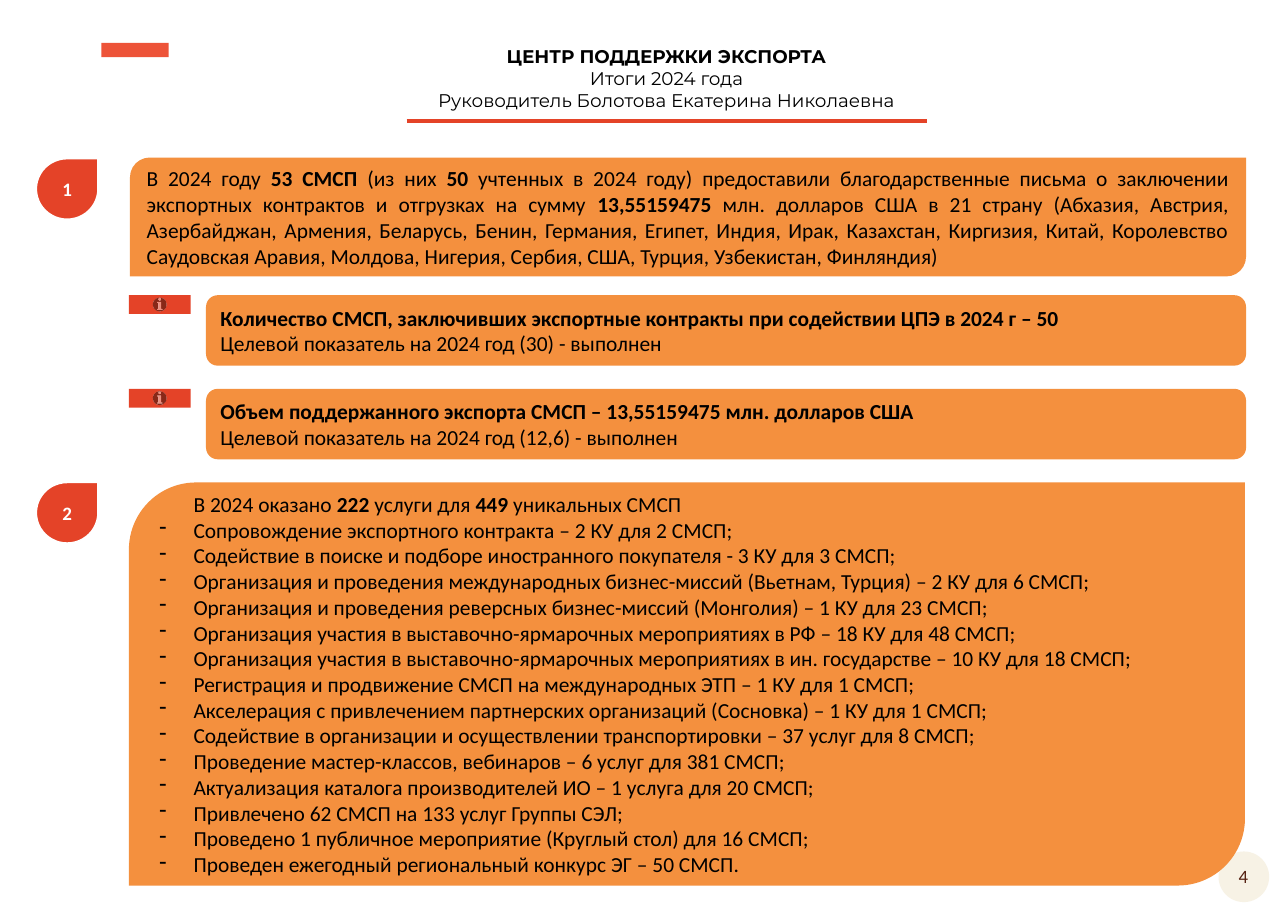
from lxml import etree
from pptx import Presentation
from pptx.dml.color import RGBColor
from pptx.enum.shapes import MSO_CONNECTOR, MSO_SHAPE
from pptx.enum.text import MSO_ANCHOR, MSO_AUTO_SIZE, PP_ALIGN
from pptx.oxml.ns import qn
from pptx.util import Inches, Pt

CENTER, JUSTIFY, LEFT = PP_ALIGN.CENTER, PP_ALIGN.JUSTIFY, PP_ALIGN.LEFT
MIDDLE = MSO_ANCHOR.MIDDLE
NO_AUTOFIT = MSO_AUTO_SIZE.NONE
STRAIGHT = MSO_CONNECTOR.STRAIGHT
OVAL, BAR = MSO_SHAPE.OVAL, MSO_SHAPE.RECTANGLE
DROP = MSO_SHAPE.TEAR
DIAGONAL = MSO_SHAPE.ROUND_2_DIAG_RECTANGLE
ROUNDED = MSO_SHAPE.ROUNDED_RECTANGLE
INFO = MSO_SHAPE.ACTION_BUTTON_INFORMATION

COLORS = {
    "orange": "F4903E",
    "red": "E44328",
    "coral": "ED5338",
    "cream": "F7F2E5",
    "brown": "562212",
    "black": "000000",
    "white": "FFFFFF",
}

TITLE = [
    "*ЦЕНТР ПОДДЕРЖКИ ЭКСПОРТА*",
    "Итоги 2024 года",
    "Руководитель Болотова Екатерина Николаевна",
]
CONTRACTS = (
    "В 2024 году *53 СМСП* (из них *50* учтенных в 2024 году) предоставили "
    "благодарственные письма о заключении экспортных контрактов и отгрузках "
    "на сумму *13,55159475* млн. долларов США в 21 страну (Абхазия, Австрия, "
    "Азербайджан, Армения, Беларусь, Бенин, Германия, Египет, Индия, Ирак, "
    "Казахстан, Киргизия, Китай, Королевство Саудовская Аравия, Молдова, "
    "Нигерия, Сербия, США, Турция, Узбекистан, Финляндия)"
)
INDICATORS = [
    (2.68, [
        "*Количество СМСП, заключивших экспортные контракты при содействии ЦПЭ в 2024 г – 50*",
        "Целевой показатель на 2024 год (30) - выполнен",
    ]),
    (3.53, [
        "*Объем поддержанного экспорта СМСП – 13,55159475 млн. долларов США*",
        "Целевой показатель на 2024 год (12,6) - выполнен",
    ]),
]
SERVICES_TOTAL = "В 2024 оказано *222* услуги для *449* уникальных СМСП"
SERVICES = [
    "Сопровождение экспортного контракта – 2 КУ для 2 СМСП;",
    "Содействие в поиске и подборе иностранного покупателя - 3 КУ для 3 СМСП;",
    "Организация и проведения международных бизнес-миссий (Вьетнам, Турция) – 2 КУ для 6 СМСП;",
    "Организация и проведения реверсных бизнес-миссий (Монголия) – 1 КУ для 23 СМСП;",
    "Организация участия в выставочно-ярмарочных мероприятиях в РФ – 18 КУ для 48 СМСП;",
    "Организация участия в выставочно-ярмарочных мероприятиях в ин. государстве – 10 КУ для 18 СМСП;",
    "Регистрация и продвижение СМСП на международных ЭТП – 1 КУ для 1 СМСП;",
    "Акселерация с привлечением партнерских организаций (Сосновка) – 1 КУ для 1 СМСП;",
    "Содействие в организации и осуществлении транспортировки – 37 услуг для 8 СМСП;",
    "Проведение мастер-классов, вебинаров – 6 услуг для 381 СМСП;",
    "Актуализация каталога производителей ИО – 1 услуга для 20 СМСП;",
    "Привлечено 62 СМСП на 133 услуг Группы СЭЛ;",
    "Проведено 1 публичное мероприятие (Круглый стол) для 16 СМСП;",
    "Проведен ежегодный региональный конкурс ЭГ – 50 СМСП.",
]


class SlideBuilder:
    def __init__(self, slide, font="Calibri", size=14):
        self.slide = slide
        self.font = font
        self.size = size

    def color(self, name):
        return RGBColor.from_string(COLORS[name])

    def set_text(self, frame, lines, align=LEFT, color="black", size=None, font=None):
        frame.word_wrap = True
        frame.auto_size = NO_AUTOFIT
        frame.vertical_anchor = MIDDLE
        for index, line in enumerate(lines):
            paragraph = frame.add_paragraph() if index else frame.paragraphs[0]
            paragraph.alignment = align
            paragraph.font.name = font or self.font
            paragraph.font.size = Pt(size or self.size)
            paragraph.font.color.rgb = self.color(color)
            pieces = line.split("*")
            emphasis = [number % 2 == 1 for number, piece in enumerate(pieces) if piece]
            if len(set(emphasis)) == 1:
                paragraph.font.bold = emphasis[0]
            for number, piece in enumerate(pieces):
                if piece:
                    run = paragraph.add_run()
                    run.text = piece
                    if len(set(emphasis)) > 1:
                        run.font.bold = number % 2 == 1

    def title(self, left, top, width, height, lines):
        heading = self.slide.shapes.title
        heading.left, heading.top = Inches(left), Inches(top)
        heading.width, heading.height = Inches(width), Inches(height)
        self.set_text(heading.text_frame, lines, CENTER, size=12, font="Montserrat")

    def shape(self, kind, left, top, width, height, fill, outline=None):
        shape = self.slide.shapes.add_shape(
            kind, Inches(left), Inches(top), Inches(width), Inches(height))
        shape.shadow.inherit = False
        shape.fill.solid()
        shape.fill.fore_color.rgb = self.color(fill)
        if outline:
            shape.line.color.rgb = self.color(outline)
            shape.line.width = Pt(1)
        else:
            shape.line.fill.background()
        return shape

    def panel(self, kind, left, top, width, height, lines, align=LEFT):
        panel = self.shape(kind, left, top, width, height, "orange")
        self.set_text(panel.text_frame, lines, align)
        return panel

    def marker(self, top, number):
        frame = self.shape(DROP, 0.33, top, 0.56, 0.55, "red", "white").text_frame
        frame.margin_left = frame.margin_right = 0
        frame.margin_top = frame.margin_bottom = 0
        self.set_text(frame, [f"*{number}*"], CENTER, "white", 12.4)

    def label(self, left, top, width, height, text, color, size):
        box = self.slide.shapes.add_textbox(
            Inches(left), Inches(top), Inches(width), Inches(height))
        self.set_text(box.text_frame, [text], CENTER, color, size)

    def dash_list(self, frame, indent):
        for index, paragraph in enumerate(frame.paragraphs):
            properties = paragraph._p.get_or_add_pPr()
            properties.set("marL", str(Inches(indent)))
            properties.set("indent", str(-Inches(indent) if index else 0))
            if index:
                bullet = etree.Element(qn("a:buChar"), char="-")
                properties.find(qn("a:defRPr")).addprevious(bullet)

    def rule(self, left, right, y):
        line = self.slide.shapes.add_connector(
            STRAIGHT, Inches(left), Inches(y), Inches(right), Inches(y))
        line.line.color.rgb = self.color("red")
        line.line.width = Pt(2.5)
        etree.SubElement(line._element.spPr, qn("a:effectLst"))


def main():
    presentation = Presentation()
    presentation.slide_width = Inches(11.69)
    presentation.slide_height = Inches(8.27)
    builder = SlideBuilder(presentation.slides.add_slide(presentation.slide_layouts[5]))

    builder.shape(OVAL, 11.06, 7.73, 0.46, 0.46, "cream")
    builder.label(11.03, 7.8, 0.51, 0.31, "4", "brown", 12.3)
    builder.shape(BAR, 0.92, 0.39, 0.61, 0.13, "coral")
    builder.title(3.44, 0.23, 5.22, 0.96, TITLE)
    builder.rule(3.69, 8.41, 1.1)

    builder.marker(1.44, 1)
    builder.panel(DIAGONAL, 1.18, 1.43, 10.13, 1.08, [CONTRACTS], JUSTIFY)
    for top, lines in INDICATORS:
        builder.shape(INFO, 1.17, top, 0.56, 0.17, "red")
        builder.panel(ROUNDED, 1.87, top, 9.44, 0.64, lines)

    builder.marker(4.38, 2)
    services = builder.panel(
        DIAGONAL, 1.17, 4.38, 10.13, 3.66, [SERVICES_TOTAL, *SERVICES])
    builder.dash_list(services.text_frame, 0.31)

    presentation.save("out.pptx")


if __name__ == "__main__":
    main()
